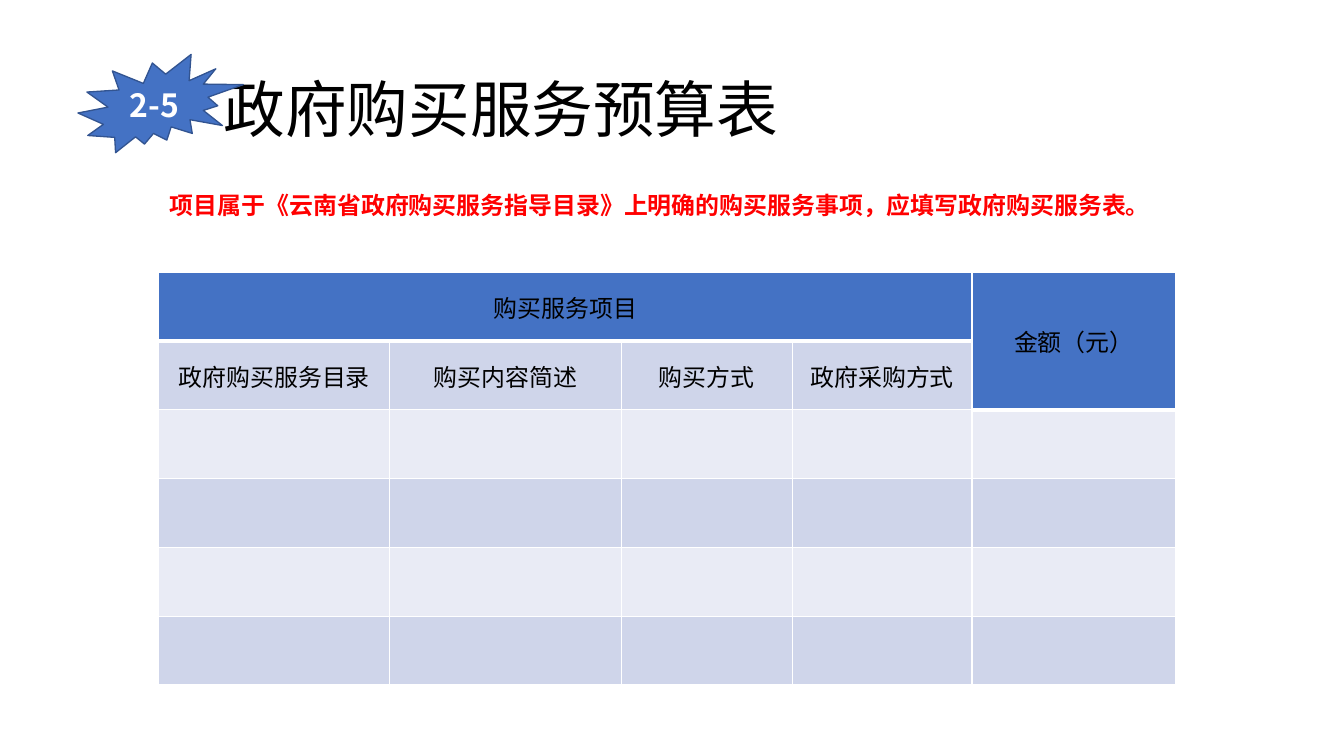
from itertools import product
from lxml import etree
from pptx import Presentation
from pptx import util as u
from pptx.dml.color import RGBColor
from pptx.enum import shapes, text
from pptx.oxml.ns import qn

W, H = 14.06, 7.91
COLORS = dict(blue="4472C4", edge="325491", band="CFD5EA", light="E9EBF5",
              white="FFFFFF", black="000000", red="FF0000")
SANS = "Noto Sans CJK SC"
TITLE_FONT = "Noto Sans CJK JP"
COLS = [2.42, 2.42, 1.79, 1.88, 2.13]
ROWS, ROW_H = 6, 0.72
SUBHEADS = ["政府购买服务目录", "购买内容简述", "购买方式", "政府采购方式"]


def rgb(name):
    return RGBColor.from_string(COLORS[name])


def write(tf, words, size=18, color="black", font=SANS, bold=False,
          align=text.PP_ALIGN.CENTER, anchor=text.MSO_ANCHOR.MIDDLE, spacing=None):
    tf.word_wrap = True
    tf.vertical_anchor = anchor
    p = tf.paragraphs[0]
    p.alignment = align
    p.line_spacing = spacing
    r = p.add_run()
    r.text = words
    r.font.size, r.font.bold, r.font.name = u.Pt(size), bold, font
    r.font.color.rgb = rgb(color)
    etree.SubElement(r._r.get_or_add_rPr(), qn("a:ea")).set("typeface", font)


def add_title(s, x, y, w, h):
    sp = s.shapes.title
    sp.left, sp.top, sp.width, sp.height = map(u.Inches, (x, y, w, h))
    tf = sp.text_frame
    tf.auto_size = text.MSO_AUTO_SIZE.NONE
    tf.margin_left = u.Inches(1.37)
    write(tf, "政府购买服务预算表", size=46.4, font=TITLE_FONT,
          align=text.PP_ALIGN.LEFT, spacing=0.9)


def add_badge(s, x, y, w, h):
    sp = s.shapes.add_shape(shapes.MSO_SHAPE.EXPLOSION2, *map(u.Inches, (x, y, w, h)))
    sp.shadow.inherit = False
    sp.fill.solid()
    sp.fill.fore_color.rgb = rgb("blue")
    sp.line.color.rgb = rgb("edge")
    sp.line.width = u.Pt(1)
    write(sp.text_frame, "2-5", size=24, color="white", bold=True)


def add_note(s, x, y, w, h):
    tf = s.shapes.add_textbox(*map(u.Inches, (x, y, w, h))).text_frame
    write(tf, "项目属于《云南省政府购买服务指导目录》上明确的购买服务事项，应填写政府购买服务表。",
          color="red", bold=True, align=text.PP_ALIGN.LEFT, anchor=text.MSO_ANCHOR.TOP)


def is_header(row, col):
    return row == 0 or (row, col) == (1, len(COLS) - 1)


def set_borders(cell, **widths):
    tcPr = cell._tc.get_or_add_tcPr()
    for i, (side, pt) in enumerate(widths.items()):
        ln = etree.Element(qn("a:ln" + side), w=str(u.Pt(pt)))
        fill = etree.SubElement(ln, qn("a:solidFill"))
        etree.SubElement(fill, qn("a:srgbClr"), val=COLORS["white"])
        tcPr.insert(i, ln)


def add_budget_table(s, x, y):
    box = map(u.Inches, (x, y, sum(COLS), ROWS * ROW_H))
    tbl = s.shapes.add_table(ROWS, len(COLS), *box).table
    for col, width in zip(tbl.columns, COLS):
        col.width = u.Inches(width)
    for row, col in product(range(ROWS), range(len(COLS))):
        cell = tbl.cell(row, col)
        header = is_header(row, col)
        cell.fill.solid()
        cell.fill.fore_color.rgb = rgb("blue" if header else "band" if row % 2 else "light")
        above = row > 0 and is_header(row - 1, col)
        set_borders(cell, L=1, R=1, T=3 if above else 1, B=3 if header else 1)
    last = len(COLS) - 1
    tbl.cell(0, 0).merge(tbl.cell(0, last - 1))
    tbl.cell(0, last).merge(tbl.cell(1, last))
    labels = {(0, 0): "购买服务项目", (0, last): "金额（元）"}
    labels.update({(1, col): words for col, words in enumerate(SUBHEADS)})
    for (row, col), words in labels.items():
        cell = tbl.cell(row, col)
        cell.margin_left = cell.margin_right = cell.margin_top = u.Inches(0.01)
        cell.margin_bottom = 0
        cell.vertical_anchor = text.MSO_ANCHOR.MIDDLE
        write(cell.text_frame, words)


def main():
    prs = Presentation()
    prs.slide_width, prs.slide_height = u.Inches(W), u.Inches(H)
    s = prs.slides.add_slide(prs.slide_layouts[5])
    add_title(s, 0.069 * W, 0.053 * H, 0.863 * W, 0.193 * H)
    add_badge(s, 0.058 * W, 0.072 * H, 0.123 * W, 0.13 * H)
    add_budget_table(s, 0.118 * W, 0.36 * H)
    add_note(s, 0.1195 * W, 0.2465 * H, 0.745 * W, 0.05 * H)
    prs.save("out.pptx")


if __name__ == "__main__":
    main()
